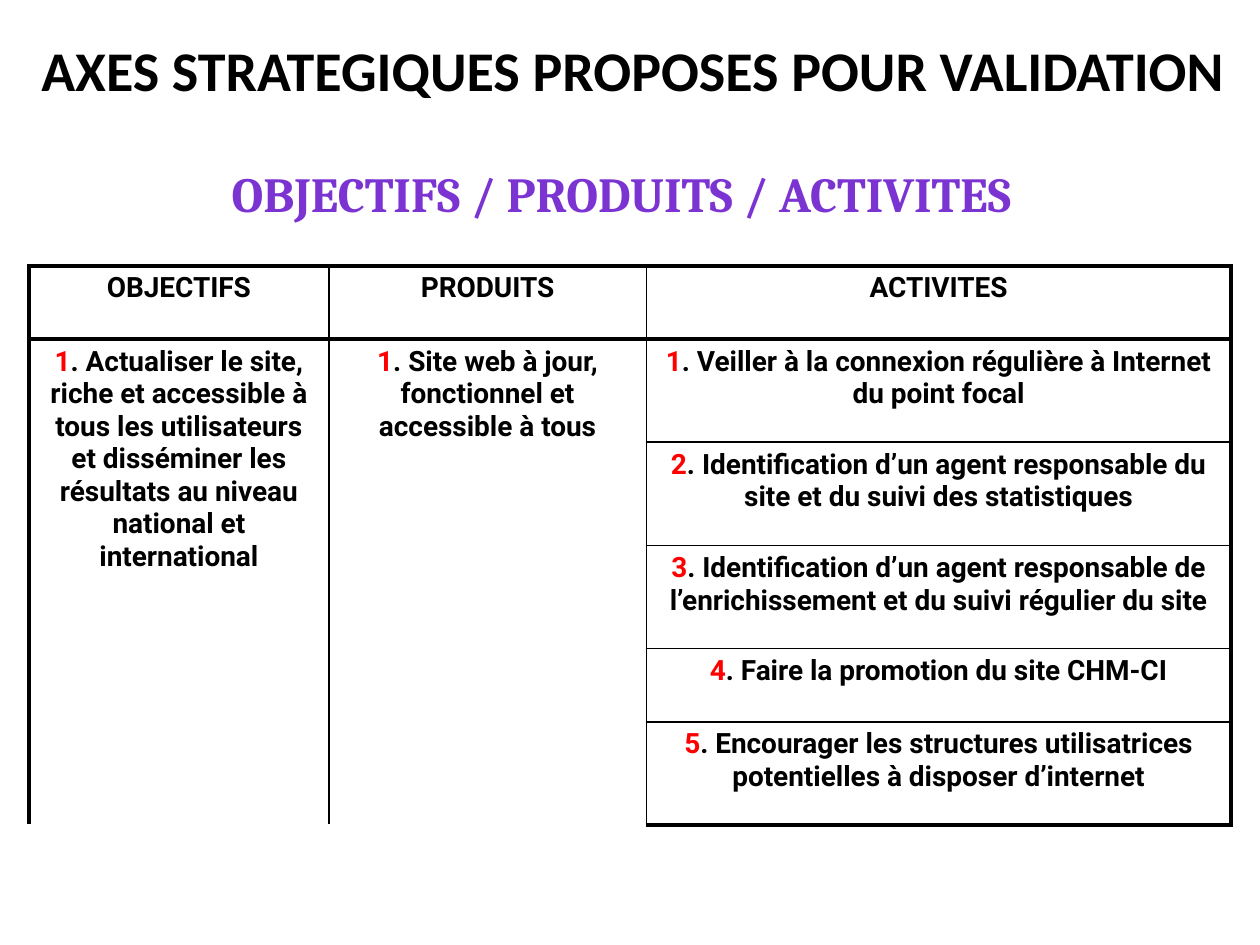
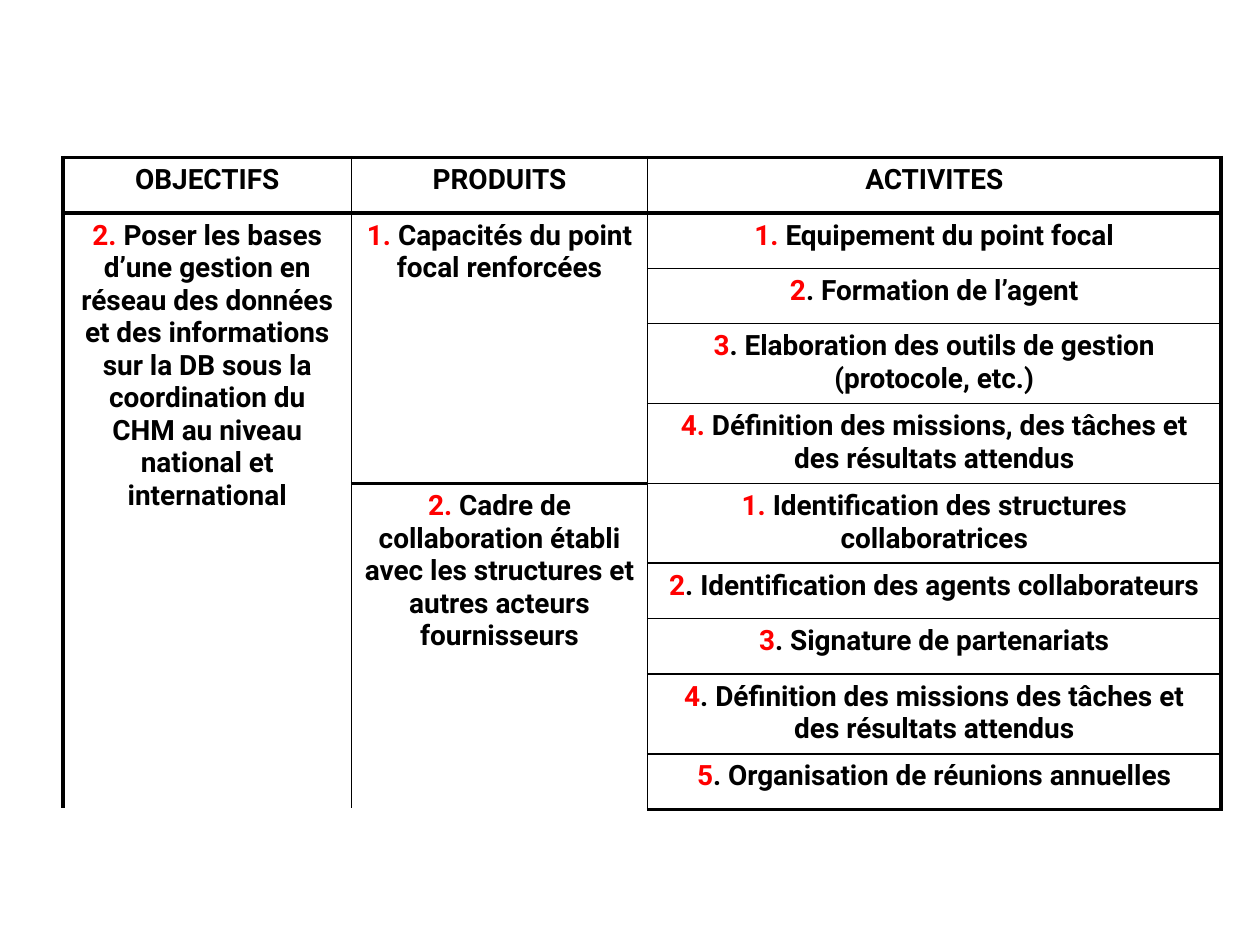
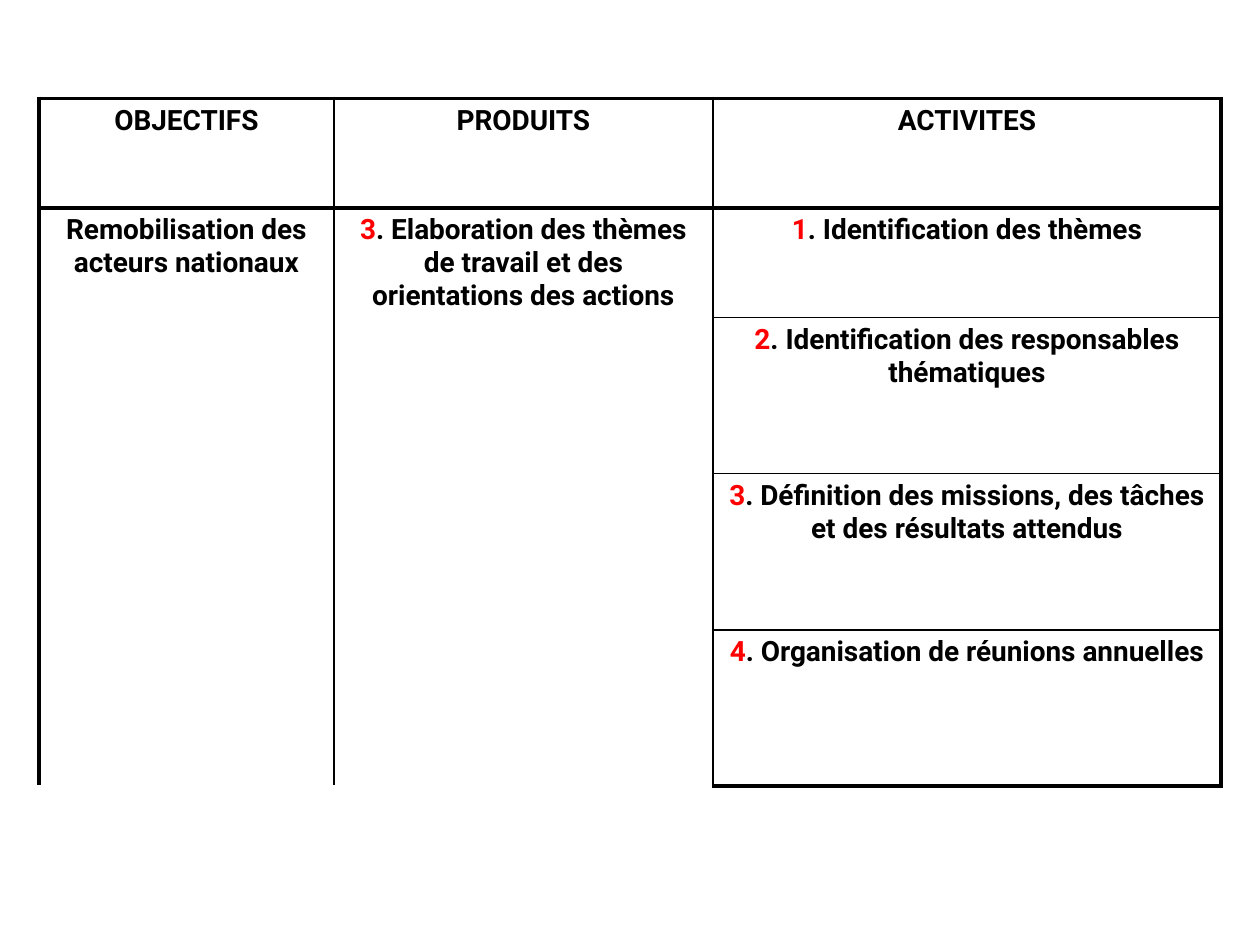
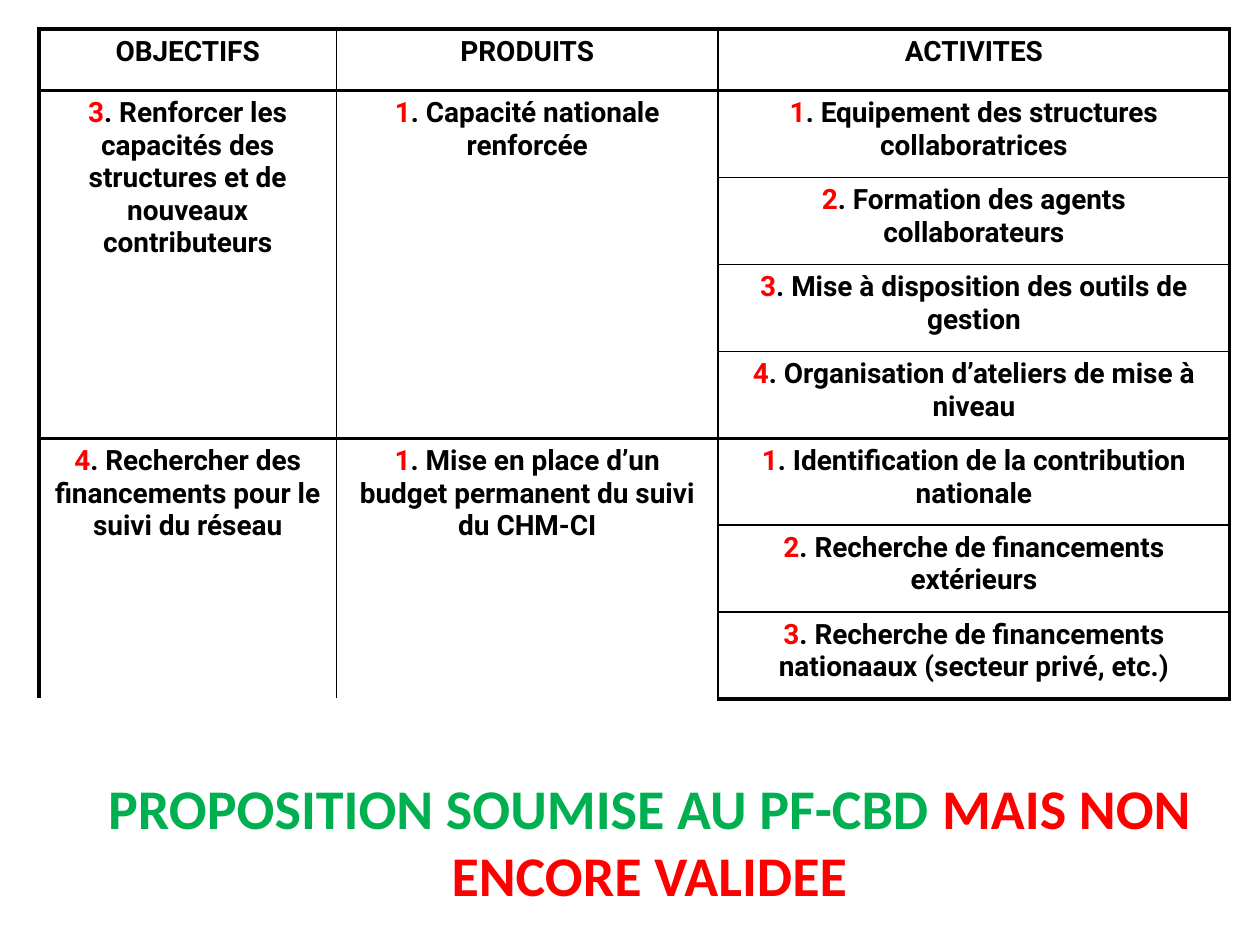
from lxml import etree
from pptx import Presentation
from pptx.dml.color import RGBColor
from pptx.enum.text import MSO_AUTO_SIZE as AUTO, PP_ALIGN as AL
from pptx.oxml import parse_xml
from pptx.oxml.ns import nsdecls, qn
from pptx.util import Inches, Pt

BLACK, RED, GREEN = "000000", "FF0000", "00B050"
PURPLE, DEEP_PURPLE, OUTLINE = "7B34D2", "3D1B67", "5E457C"
THIN, THICK, HEAVY = 1, 2.25, 3
HEADERS = ["OBJECTIFS", "PRODUITS", "ACTIVITES"]

# Objectives hold products, products hold activities; "|" ends the red number.
SLIDES = [
    {
        "texts": [
            dict(box=(0.23, 0.23, 9.77, 0.64), font="Calibri", size=32, align=AL.LEFT,
                 runs=[("AXES STRATEGIQUES PROPOSES POUR VALIDATION", BLACK)]),
            dict(box=(0.39, 1.25, 9.08, 0.57), font="Cambria", size=28, align=AL.CENTER,
                 runs=[("OBJECTIFS / PRODUITS / ACTIVITES", PURPLE)], glossy=True),
        ],
        "at": (0.23, 2.11), "cols": [2.38, 2.52, 4.64], "bottom": THICK,
        "rows": [0.58, 0.82, 0.82, 0.82, 0.58, 0.82],
        "plan": [
            ("1|. Actualiser le site, riche et accessible à tous les utilisateurs et "
             "disséminer les résultats au niveau national et international", [
                ("1|. Site web à jour, fonctionnel et accessible à tous", [
                    "1|. Veiller à la connexion régulière à Internet du point focal",
                    "2|. Identification d’un agent responsable du site et du suivi des statistiques",
                    "3|. Identification d’un agent responsable de l’enrichissement et du suivi régulier du site",
                    "4|. Faire la promotion du site CHM-CI",
                    "5|. Encourager les structures utilisatrices potentielles à disposer d’internet",
                ]),
            ]),
        ],
    },
    {
        "texts": [],
        "at": (0.5, 1.25), "cols": [2.29, 2.35, 4.55], "bottom": THICK,
        "rows": [0.44] * 10,
        "plan": [
            ("2. |Poser les bases d’une gestion en réseau des données et des informations "
             "sur la DB sous la coordination du CHM au niveau national et international", [
                ("1. |Capacités du point focal renforcées", [
                    "1.| Equipement du point focal",
                    "2|. Formation de l’agent",
                    "3|. Elaboration des outils de gestion (protocole, etc.)",
                    "4. |Définition des missions, des tâches et des résultats attendus",
                ]),
                ("2. |Cadre de collaboration établi avec les structures et autres acteurs fournisseurs", [
                    "1. |Identification des structures collaboratrices",
                    "2|. Identification des agents collaborateurs",
                    "3|. Signature de partenariats",
                    "4|. Définition des missions des tâches et des résultats attendus",
                    "5|. Organisation de réunions annuelles",
                ]),
            ]),
        ],
    },
    {
        "texts": [],
        "at": (0.31, 0.78), "cols": [2.34, 3.01, 4.03], "bottom": HEAVY,
        "rows": [0.87] * 2 + [1.24] * 3,
        "plan": [
            ("Remobilisation des acteurs nationaux", [
                ("3|. Elaboration des thèmes de travail et des orientations des actions", [
                    "1|. Identification des thèmes",
                    "2|. Identification des responsables thématiques",
                    "3|. Définition des missions, des tâches et des résultats attendus",
                    "4|. Organisation de réunions annuelles",
                ]),
            ]),
        ],
    },
    {
        "texts": [
            dict(box=(0.31, 6.09, 9.69, 1.18), font="Calibri", size=32, align=AL.CENTER,
                 runs=[("PROPOSITION SOUMISE AU PF-CBD ", GREEN),
                       ("MAIS NON ENCORE VALIDEE", RED)]),
        ],
        "at": (0.31, 0.23), "cols": [2.36, 3.03, 4.06], "bottom": THICK,
        "rows": [0.49] + [0.69] * 7,
        "plan": [
            ("3|. Renforcer les capacités des structures et de nouveaux contributeurs", [
                ("1|. Capacité nationale renforcée", [
                    "1|. Equipement des structures collaboratrices",
                    "2|. Formation des agents collaborateurs",
                    "3|. Mise à disposition des outils de gestion",
                    "4|. Organisation d’ateliers de mise à niveau",
                ]),
            ]),
            ("4|. Rechercher des financements pour le suivi du réseau", [
                ("1|. Mise en place d’un budget permanent du suivi du CHM-CI", [
                    "1|. Identification de la contribution nationale",
                    "2|. Recherche de financements extérieurs",
                    "3|. Recherche de financements nationaaux (secteur privé, etc.)",
                ]),
            ]),
        ],
    },
]


def color(hex_value):
    return RGBColor.from_string(hex_value)


def write(p, runs, font, size, align):
    p.alignment = align
    for text, ink in runs:
        r = p.add_run()
        r.text = text
        r.font.name, r.font.size, r.font.bold = font, Pt(size), True
        r.font.color.rgb = color(ink)


def make_glossy(r):
    rPr = r.font._element if hasattr(r.font, "_element") else r._r.get_or_add_rPr()
    stops = [(0, DEEP_PURPLE), (43, PURPLE), (48, "7330C4"), (100, DEEP_PURPLE)]
    gs = "".join(f'<a:gs pos="{pos * 1000}"><a:srgbClr val="{ink}"/></a:gs>' for pos, ink in stops)
    rPr.replace(rPr.find(qn("a:solidFill")), parse_xml(
        f'<a:gradFill {nsdecls("a")}><a:gsLst>{gs}</a:gsLst><a:lin ang="5400000"/></a:gradFill>'))
    rPr.insert(0, parse_xml(
        f'<a:ln {nsdecls("a")} w="{Pt(0.71)}"><a:solidFill><a:srgbClr val="{OUTLINE}"/>'
        '</a:solidFill></a:ln>'))


def add_text(s, box, runs, font, size, align, glossy=False):
    tf = s.shapes.add_textbox(*map(Inches, box)).text_frame
    tf.word_wrap, tf.auto_size = True, AUTO.SHAPE_TO_FIT_TEXT
    p = tf.paragraphs[0]
    write(p, runs, font, size, align)
    if glossy:
        make_glossy(p.runs[0])


def set_borders(cell, **widths):
    tcPr = cell._tc.get_or_add_tcPr()
    for i, (side, width) in enumerate(widths.items()):
        ln = etree.Element(qn(f"a:ln{side}"), w=str(Pt(width)))
        fill = etree.SubElement(ln, qn("a:solidFill"))
        etree.SubElement(fill, qn("a:srgbClr"), val=BLACK)
        tcPr.insert(i, ln)


def place_plan(plan):
    placed = [(0, c, 1, text) for c, text in enumerate(HEADERS)]
    row = 1
    for objective, products in plan:
        placed.append((row, 0, sum(len(acts) for _, acts in products), objective))
        for product, activities in products:
            placed.append((row, 1, len(activities), product))
            for activity in activities:
                placed.append((row, 2, 1, activity))
                row += 1
    return placed


def add_plan(s, at, cols, rows, plan, bottom):
    size = sum(cols), sum(rows)
    table = s.shapes.add_table(len(rows), len(cols), *map(Inches, at + size)).table
    table.first_row = table.horz_banding = False
    for column, width in zip(table.columns, cols):
        column.width = Inches(width)
    for row, height in zip(table.rows, rows):
        row.height = Inches(height)

    placed = place_plan(plan)
    rules = {r: THICK for r, c, _, _ in placed if c == 0}
    rules[len(rows)] = bottom
    for r, c, span, text in placed:
        cell = table.cell(r, c)
        if span > 1:
            cell.merge(table.cell(r + span - 1, c))
        number, _, rest = text.rpartition("|")
        runs = [(part, ink) for part, ink in ((number, RED), (rest, BLACK)) if part]
        write(cell.text_frame.paragraphs[0], runs, "Roboto", 16, AL.CENTER)
        for k in range(r, r + span):
            part = table.cell(k, c)
            part.fill.background()
            sides = {"L": THIN if c else THICK,
                     "R": THICK if c == len(cols) - 1 else THIN}
            if k == r:
                sides["T"] = rules.get(r, THIN)
            if k == r + span - 1:
                sides["B"] = rules.get(r + span, THIN)
            set_borders(part, **sides)


def main():
    prs = Presentation()
    prs.slide_width, prs.slide_height = Inches(10), Inches(7.5)
    for page in SLIDES:
        s = prs.slides.add_slide(prs.slide_layouts[6])
        for text in page["texts"]:
            add_text(s, **text)
        add_plan(s, page["at"], page["cols"], page["rows"], page["plan"], page["bottom"])
    prs.save("out.pptx")


if __name__ == "__main__":
    main()
